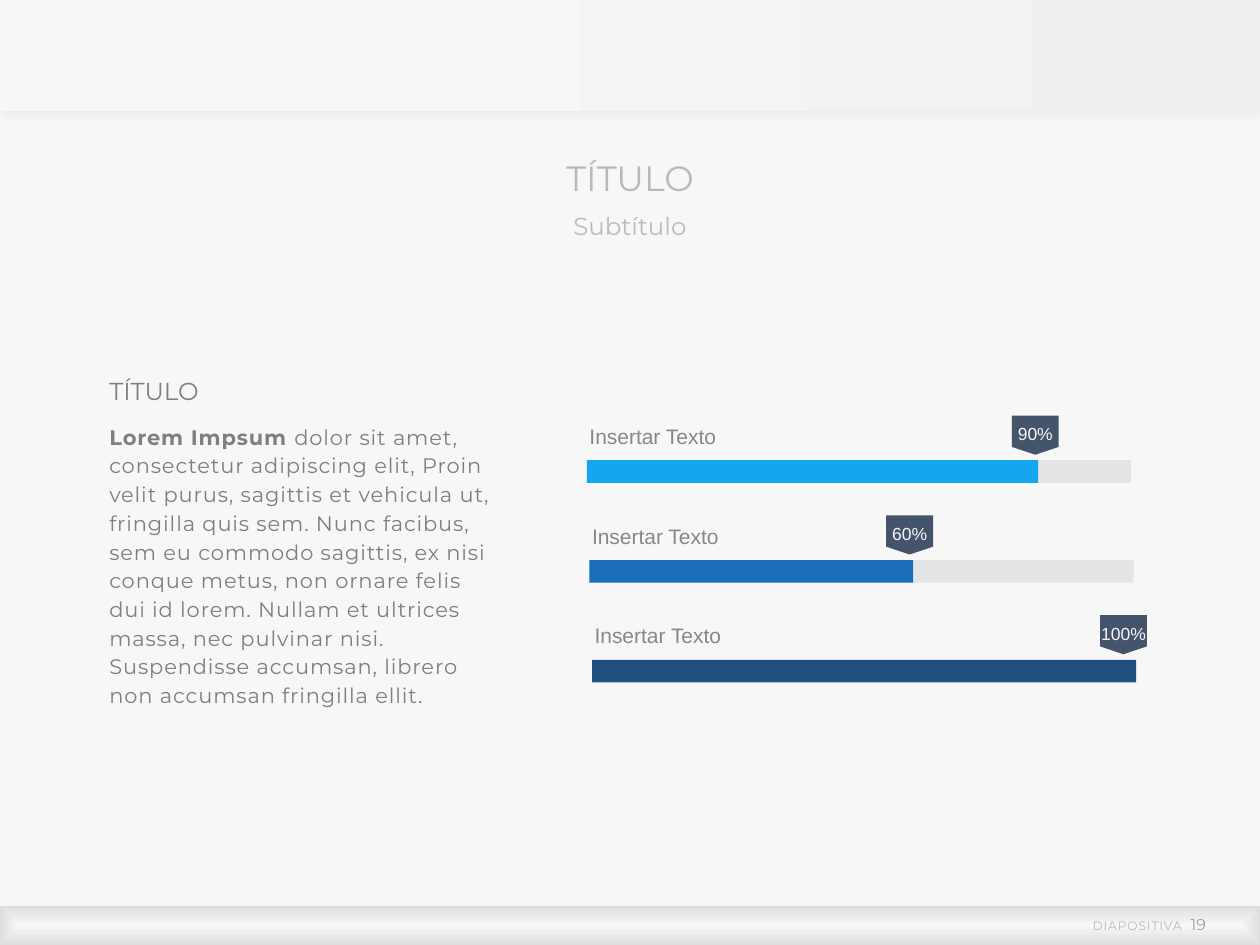
from lxml.etree import SubElement
from pptx import Presentation
from pptx.dml.color import RGBColor
from pptx.enum.shapes import MSO_SHAPE
from pptx.enum.text import MSO_ANCHOR, MSO_AUTO_SIZE, PP_ALIGN
from pptx.oxml.ns import qn
from pptx.util import Pt

COLORS = {
    "paper": "F7F7F7", "header_end": "EFEFEF", "footer_edge": "DEDEDE",
    "title": "B9B9B9", "subtitle": "BBBBBB", "number": "A1A1A1",
    "body": "7F7F7F", "label": "868888", "track": "E4E4E4", "badge": "44546A",
    "sky": "14A7ED", "blue": "1B6FBA", "navy": "1F5080", "shadow": "000000",
}
TITLE = "TÍTULO"
SUBTITLE = "Subtítulo"
SECTION = "TÍTULO"
LEAD = "Lorem Impsum "
BODY = (
    "dolor sit amet, consectetur adipiscing elit, Proin velit purus, sagittis "
    "et vehicula ut, fringilla quis sem. Nunc facibus, sem eu commodo sagittis, "
    "ex nisi conque metus, non ornare felis dui id lorem. Nullam et ultrices "
    "massa, nec pulvinar nisi. Suspendisse accumsan, librero non accumsan "
    "fringilla ellit."
)
FOOTER = [("DIAPOSITIVA", 7, "title", 0.5), (" ", 7, "title", 2.8), ("19", 9, "number", 0)]
BARS = [
    ("Insertar Texto", "90%", 257.8, 578.2, "sky"),
    ("Insertar Texto", "60%", 185, 506.4, "blue"),
    ("Insertar Texto", "100%", 311, 628.6, "navy"),
]
TRACK_LEFT, TRACK_TOP, TRACK_WIDTH, TRACK_HEIGHT = 335.4, 263, 311, 13
ROW_SHIFT, ROW_PITCH = 1.45, 57
MARGINS = (7.2, 3.6, 7.2, 3.6)


def rgb(name):
    """Return the named colour."""
    return RGBColor.from_string(COLORS[name])


def set_all(target, values):
    """Set each attribute from a dict of values."""
    for attribute, value in values.items():
        setattr(target, attribute, value)


def write(holder, runs, margins=MARGINS, anchor=MSO_ANCHOR.TOP, wrap=True, **paragraph_format):
    """Fill a shape with one paragraph of (text, size, colour, tracking, font, bold) runs."""
    frame = holder.text_frame
    left, top, right, bottom = map(Pt, margins)
    set_all(frame, {
        "auto_size": MSO_AUTO_SIZE.NONE, "word_wrap": wrap, "vertical_anchor": anchor,
        "margin_left": left, "margin_top": top, "margin_right": right, "margin_bottom": bottom,
    })
    paragraph = frame.paragraphs[0]
    set_all(paragraph, {"alignment": PP_ALIGN.LEFT, "space_before": Pt(0), **paragraph_format})
    for text, size, color, tracking, font, bold in runs:
        run = paragraph.add_run()
        run.text = text
        set_all(run.font, {"size": Pt(size), "name": font, "bold": bold})
        run.font.color.rgb = rgb(color)
        if tracking:
            run.font._element.set("spc", str(round(tracking * 100)))


def add_block(slide, box, color=None, preset=MSO_SHAPE.RECTANGLE):
    """Add a borderless shape without shadow."""
    block = slide.shapes.add_shape(preset, *map(Pt, box))
    block.shadow.inherit = False
    block.line.fill.background()
    if color:
        block.fill.solid()
        block.fill.fore_color.rgb = rgb(color)
    return block


def add_gradient(block, stops):
    """Give a shape a left to right gradient and return its XML."""
    block.fill.gradient()
    block.fill.gradient_angle = 0
    for stop, (position, color) in zip(block.fill.gradient_stops, stops):
        stop.position = position
        stop.color.rgb = rgb(color)
    return block._element.spPr.find(qn("a:gradFill"))


def add_header(slide):
    """Add the shaded band at the top."""
    header = add_block(slide, (0, 0, 720, 63.4))
    add_gradient(header, [(0.28, "paper"), (1, "header_end")])
    effects = header._element.spPr.find(qn("a:effectLst"))
    shadow = SubElement(effects, qn("a:outerShdw"), blurRad=str(Pt(4)), dist=str(Pt(3)),
                        dir="5400000", algn="t", rotWithShape="0")
    tint = SubElement(shadow, qn("a:srgbClr"), val=COLORS["shadow"])
    SubElement(tint, qn("a:alpha"), val="3000")


def add_footer(slide):
    """Add the bevelled band and slide number at the bottom."""
    footer = add_block(slide, (0, 517.7, 720, 22.3))
    gradient = add_gradient(footer, [(0, "paper"), (1, "footer_edge")])
    gradient.remove(gradient.find(qn("a:lin")))
    focus = SubElement(gradient, qn("a:path"), path="shape")
    SubElement(focus, qn("a:fillToRect"), l="50000", t="50000", r="50000", b="50000")
    number = slide.shapes.add_textbox(*map(Pt, (614.9, 522.7, 74.2, 10.8)))
    write(number, [(*run, "Montserrat", False) for run in FOOTER],
          margins=(0, 0, 0, 0), wrap=False, alignment=PP_ALIGN.RIGHT)


def add_texts(slide):
    """Add the title, subtitle and text column."""
    title = slide.shapes.title
    set_all(title, dict(zip(("left", "top", "width", "height"), map(Pt, (229.5, 87.8, 261, 29.5)))))
    write(title, [(TITLE, 20, "title", 0, "Montserrat", False)], anchor=MSO_ANCHOR.BOTTOM,
          alignment=PP_ALIGN.CENTER, line_spacing=0.9)
    column = [
        ((229.5, 118.8, 261, 23), [(SUBTITLE, 14, "subtitle", 0, "Montserrat", False)],
         MSO_ANCHOR.TOP, PP_ALIGN.CENTER, 0.9),
        ((55.4, 195.8, 134.6, 39.6), [(SECTION, 14, "body", 0, "Montserrat", False)],
         MSO_ANCHOR.BOTTOM, PP_ALIGN.LEFT, 0.9),
        ((55.4, 236.9, 234.7, 213), [(LEAD, 12, "body", 0.5, "Montserrat", True),
                                     (BODY, 12, "body", 0.5, "Montserrat", False)],
         MSO_ANCHOR.TOP, PP_ALIGN.LEFT, 1.14),
    ]
    for box, runs, anchor, alignment, spacing in column:
        write(slide.shapes.add_textbox(*map(Pt, box)), runs, anchor=anchor,
              alignment=alignment, line_spacing=spacing)


def add_bars(slide):
    """Add the progress bars with labels and badges."""
    for row, (label, percent, width, badge_left, color) in enumerate(BARS):
        left = TRACK_LEFT + row * ROW_SHIFT
        top = TRACK_TOP + row * ROW_PITCH
        if width < TRACK_WIDTH:
            add_block(slide, (left, top, TRACK_WIDTH, TRACK_HEIGHT), "track")
        add_block(slide, (left, top, width, TRACK_HEIGHT), color)
        caption = slide.shapes.add_textbox(*map(Pt, (left + 1.45, top - 21, 143.3, 14.4)))
        write(caption, [(label, 12, "label", 0, "Arial", False)],
              margins=(0, 0, 0, 0), anchor=MSO_ANCHOR.MIDDLE)
        badge = add_block(slide, (badge_left, top - 25.5, 26.8, 22.4), "badge",
                          MSO_SHAPE.FLOWCHART_OFFPAGE_CONNECTOR)
        write(badge, [(percent, 10, "paper", 0, "Arial", False)], margins=(0, 2.9, 0, 0),
              anchor=MSO_ANCHOR.MIDDLE, alignment=PP_ALIGN.CENTER)


def main():
    """Build and save the slide."""
    deck = Presentation()
    set_all(deck, {"slide_width": Pt(720), "slide_height": Pt(540)})
    slide = deck.slides.add_slide(deck.slide_layouts[5])
    slide.background.fill.solid()
    slide.background.fill.fore_color.rgb = rgb("paper")
    for add_part in (add_header, add_footer, add_texts, add_bars):
        add_part(slide)
    deck.save("out.pptx")


if __name__ == "__main__":
    main()
